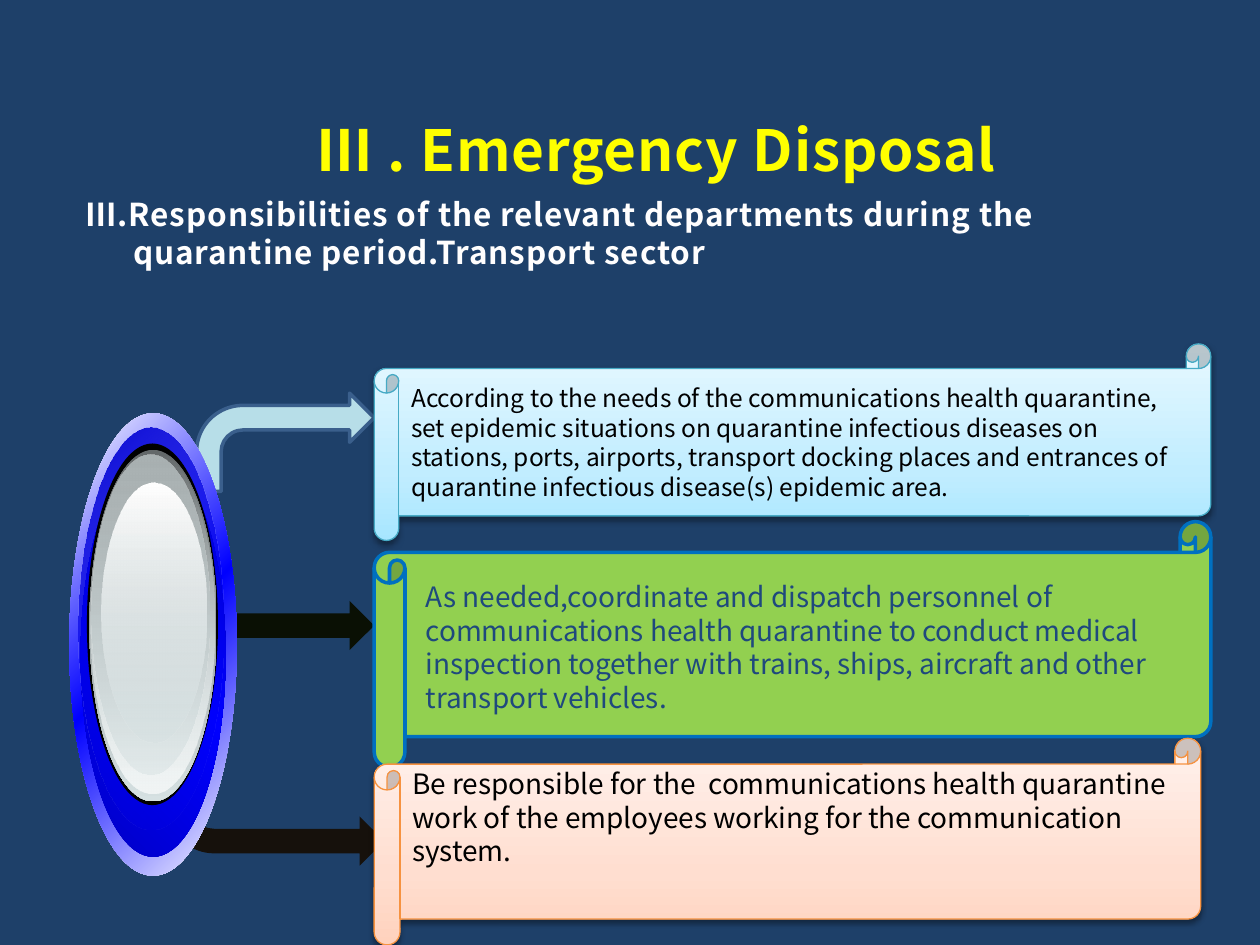
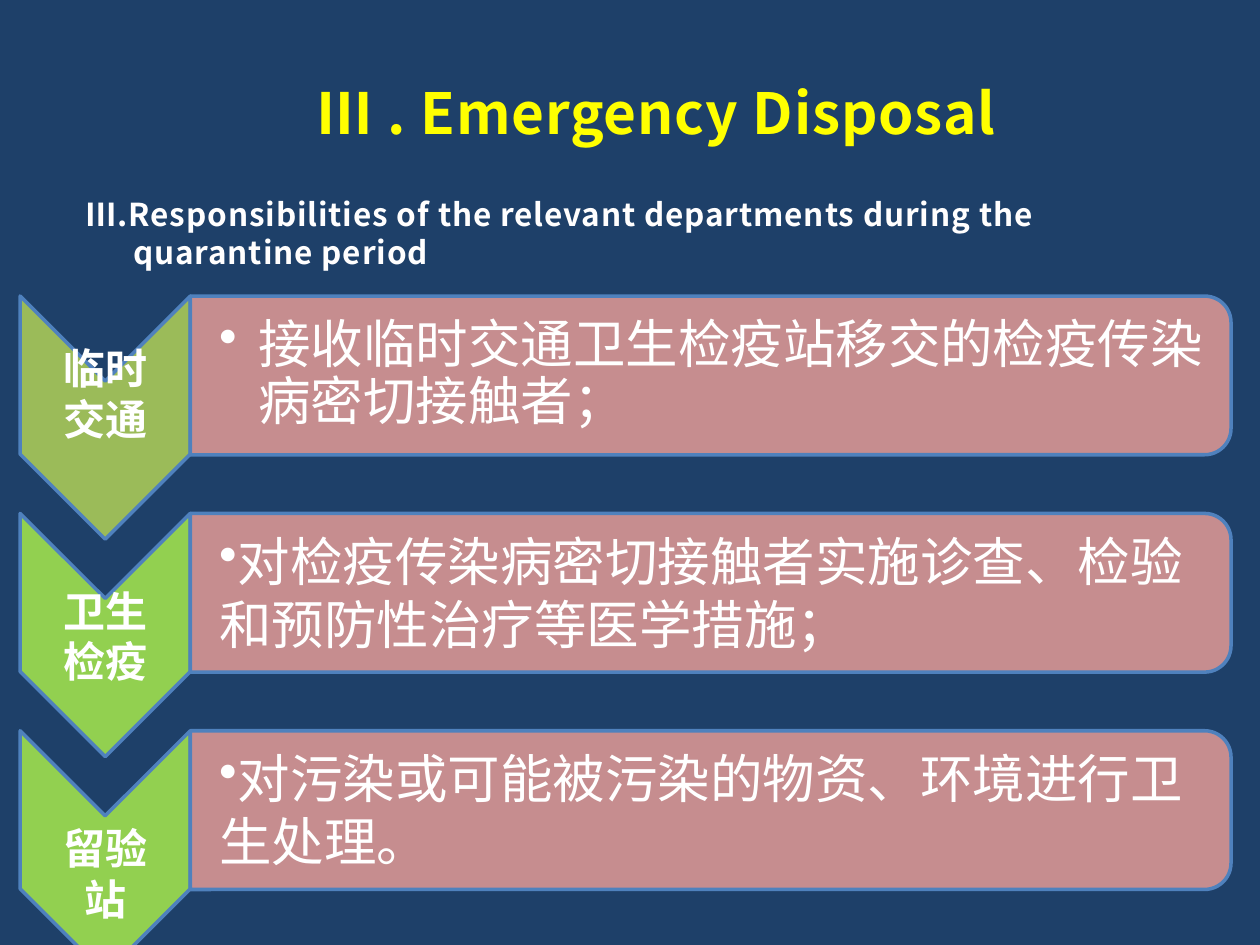
"""Build two slides on emergency disposal and quarantine duties."""
import pptx
import pptx.util
import pptx.dml.color
import pptx.enum.shapes
import pptx.enum.text
import pptx.oxml.ns
import lxml.etree

Inches = pptx.util.Inches
Pt = pptx.util.Pt
qn = pptx.oxml.ns.qn
Kind = pptx.enum.shapes.MSO_SHAPE
Align = pptx.enum.text.PP_ALIGN
Anchor = pptx.enum.text.MSO_ANCHOR
FONT = "Noto Sans CJK SC"
NAVY, GREEN, WHITE, BLACK = "1E4069", "92D050", "FFFFFF", "000000"


def paint(shape, fill, line=None, width=2, angle=0):
    """Fill with a hex colour or (position, hex, opacity) stops, and outline."""
    rgb = pptx.dml.color.RGBColor.from_string
    shape.shadow.inherit = False
    if isinstance(fill, str):
        shape.fill.solid()
        shape.fill.fore_color.rgb = rgb(fill)
    else:
        shape.fill.gradient()
        shape.fill.gradient_angle = (360 - angle) % 360
        stops = shape._element.spPr.find(qn("a:gradFill")).find(qn("a:gsLst"))
        for old in list(stops):
            stops.remove(old)
        for pos, tone, alpha in fill:
            stop = lxml.etree.SubElement(stops, qn("a:gs"), pos=str(pos * 1000))
            clr = lxml.etree.SubElement(stop, qn("a:srgbClr"), val=tone)
            if alpha < 100:
                lxml.etree.SubElement(clr, qn("a:alpha"), val=str(alpha * 1000))
    if line:
        shape.line.color.rgb = rgb(line)
        shape.line.width = Pt(width)
    else:
        shape.line.fill.background()


def write(shape, text, size, tone, bold=False, align=Align.LEFT,
          anchor=Anchor.TOP, hang=0, bullet=False, space=None):
    """Write one paragraph per line of text and format it."""
    frame = shape.text_frame
    frame.word_wrap = True
    frame.auto_size = pptx.enum.text.MSO_AUTO_SIZE.NONE
    frame.vertical_anchor = anchor
    frame.text = text
    for para in frame.paragraphs:
        para.alignment = align
        if space:
            para.line_spacing = space
        props = para._p.get_or_add_pPr()
        props.set("marL", str(Inches(hang)))
        props.set("indent", str(-Inches(hang)))
        if bullet:
            lxml.etree.SubElement(props, qn("a:buChar"), char="•")
        font = para.font
        font.name = FONT
        font.size = Pt(size)
        font.bold = bold
        font.color.rgb = pptx.dml.color.RGBColor.from_string(tone)
        lxml.etree.SubElement(font._rPr, qn("a:ea"), typeface=FONT)
        if shape.is_placeholder or hang == 0.38:
            font._rPr.set("spc", "50")


prs = pptx.Presentation()
prs.slide_width, prs.slide_height = Inches(10), Inches(7.5)
back = prs.slide_master.background.fill
back.solid()
back.fore_color.rgb = pptx.dml.color.RGBColor.from_string(NAVY)

duty = "Ⅲ.Responsibilities of the relevant departments during the quarantine period"
heads = [(0.87, duty + ".Transport sector"), (0.58, duty)]
slides = []
for top, text in heads:
    slide = prs.slides.add_slide(prs.slide_layouts[5])
    title = slide.shapes.title
    title.left, title.top = Inches(1.17), Inches(top)
    title.width, title.height = Inches(8.08), Inches(0.62)
    write(title, "Ⅲ . Emergency Disposal", 32.4, "FFFF00", True,
          Align.CENTER, Anchor.MIDDLE)
    box = slide.shapes.add_textbox(Inches(0.58), Inches(1.5), Inches(9), Inches(0.8))
    write(box, text, 18, "FFFEFE", True, hang=0.38)
    slides.append(slide.shapes)
first, second = slides

arrows = [
    (1.25, 4.38, 1.72, "0A1004", None, True),
    (1.33, 6.09, 1.72, "16110C", None, True),
    (1.56, 3.12, 1.41, "B7DEE8", "3A5F8C", False),
]
for left, top, wide, fill, line, flip in arrows:
    arrow = first.add_shape(Kind.BENT_ARROW, Inches(left), Inches(top),
                            Inches(wide), Inches(0.78))
    arrow.adjustments[3] = 0.472
    paint(arrow, fill, line)
    if flip:
        arrow._element.spPr.xfrm.set("flipV", "1")

rings = [
    (0.55, 3.28, 1.33, 3.67, [(0, WHITE, 100), (50, "0000FF", 100), (100, WHITE, 100)], 45),
    (0.64, 3.61, 1.15, 3.19, [(0, "0000C3", 100), (50, "0000FF", 100), (100, "0000C3", 100)], 315),
    (0.62, 3.39, 1.15, 3.19, [(0, "0000D1", 100), (100, "0000FF", 0)], 45),
    (0.69, 3.52, 1.04, 2.87, BLACK, 0),
    (0.71, 3.57, 1.01, 2.79, [(0, "636869", 100), (100, "D6E1E2", 100)], 90),
    (0.72, 3.58, 0.98, 2.72, [(0, "D6E1E2", 0), (100, "F1F5F5", 100)], 90),
    (0.73, 3.61, 0.93, 2.54, [(0, "AAB2B3", 100), (100, "D6E1E2", 48)], 90),
    (0.81, 3.83, 0.83, 2.06, [(0, WHITE, 100), (100, "D6E1E2", 38)], 90),
]
disc = first.add_group_shape()
for left, top, wide, high, fill, angle in rings:
    ring = disc.shapes.add_shape(Kind.OVAL, Inches(left), Inches(top),
                                 Inches(wide), Inches(high))
    paint(ring, fill, angle=angle)

blue = [(0, "A7E6FF", 100), (35, "C1EDFF", 100), (100, "E7F8FF", 100)]
peach = [(0, "FFD2BD", 100), (35, "FFDED0", 100), (100, "FFF2ED", 100)]
scrolls = [
    (2.73, 6.64, 1.56, blue, "46AAC5", 0.75, 14, Anchor.MIDDLE,
     "According to the needs of the communications health quarantine, set epidemic "
     "situations on quarantine infectious diseases on stations, ports, airports, "
     "transport docking places and entrances of quarantine infectious disease(s) "
     "epidemic area."),
    (4.14, 6.64, 1.95, GREEN, "0070C0", 2, 0, None, ""),
    (5.86, 6.56, 1.64, peach, "F69240", 0.75, 16, Anchor.TOP,
     "Be responsible for the  communications health quarantine work of the "
     "employees working for the communication system."),
]
for top, wide, high, fill, line, width, size, anchor, text in scrolls:
    scroll = first.add_shape(Kind.HORIZONTAL_SCROLL, Inches(2.97), Inches(top),
                             Inches(wide), Inches(high))
    paint(scroll, fill, line, width, 270)
    if text:
        write(scroll, text, size, BLACK, anchor=anchor)
        scroll.text_frame.margin_top = Inches(0.02 if anchor == Anchor.TOP else 0.05)
        effects = scroll._element.spPr.find(qn("a:effectLst"))
        shade = lxml.etree.SubElement(effects, qn("a:outerShdw"), blurRad="40000",
                                      dist="20000", dir="5400000", rotWithShape="0")
        clr = lxml.etree.SubElement(shade, qn("a:srgbClr"), val=BLACK)
        lxml.etree.SubElement(clr, qn("a:alpha"), val="38000")

note = first.add_textbox(Inches(3.28), Inches(4.55), Inches(6.33), Inches(1.35))
write(note, "As needed,coordinate and dispatch personnel of communications health "
      "quarantine to conduct medical inspection together with trains, ships, "
      "aircraft and other transport vehicles.", 16, "1F497D")

steps = [
    ("临时\n交通", "9BBB59", -0.2, 0.31, 0.9,
     "接收临时交通卫生检疫站移交的检疫传染病密切接触者；"),
    ("卫生\n检疫", GREEN, 0, 0, None,
     "对检疫传染病密切接触者实施诊查、检验和预防性治疗等医学措施；"),
    ("留验\n站", GREEN, 0.16, 0, None,
     "对污染或可能被污染的物资、环境进行卫生处理。"),
]
for row, (name, fill, shift, hang, space, text) in enumerate(steps):
    drop = row * 1.725
    mark = second.add_shape(Kind.CHEVRON, Inches(-0.13), Inches(2.64 + drop),
                            Inches(1.93), Inches(1.35))
    mark.rotation = 90
    paint(mark, fill, "4F81BD")
    label = second.add_textbox(Inches(0.16), Inches(3.03 + drop + shift),
                               Inches(1.35), Inches(0.58))
    write(label, name, 24, WHITE, True, Align.CENTER, Anchor.MIDDLE)
    bar = second.add_shape(Kind.ROUND_2_SAME_RECTANGLE, Inches(5.01),
                           Inches(-1.15 + drop), Inches(1.26), Inches(8.26))
    bar.rotation = 90
    paint(bar, "D99694", "4F81BD")
    clr = bar._element.spPr.find(qn("a:solidFill"))[0]
    lxml.etree.SubElement(clr, qn("a:alpha"), val="90000")
    body = second.add_textbox(Inches(1.51), Inches(2.41 + drop), Inches(8.2), Inches(1.13))
    write(body, text, 30, WHITE, anchor=Anchor.MIDDLE, hang=hang, bullet=True, space=space)
    for box, left in ((label, 0.02), (body, 0.23)):
        frame = box.text_frame
        frame.margin_left = Inches(left)
        frame.margin_top = frame.margin_right = frame.margin_bottom = Inches(0.02)

prs.save("out.pptx")
